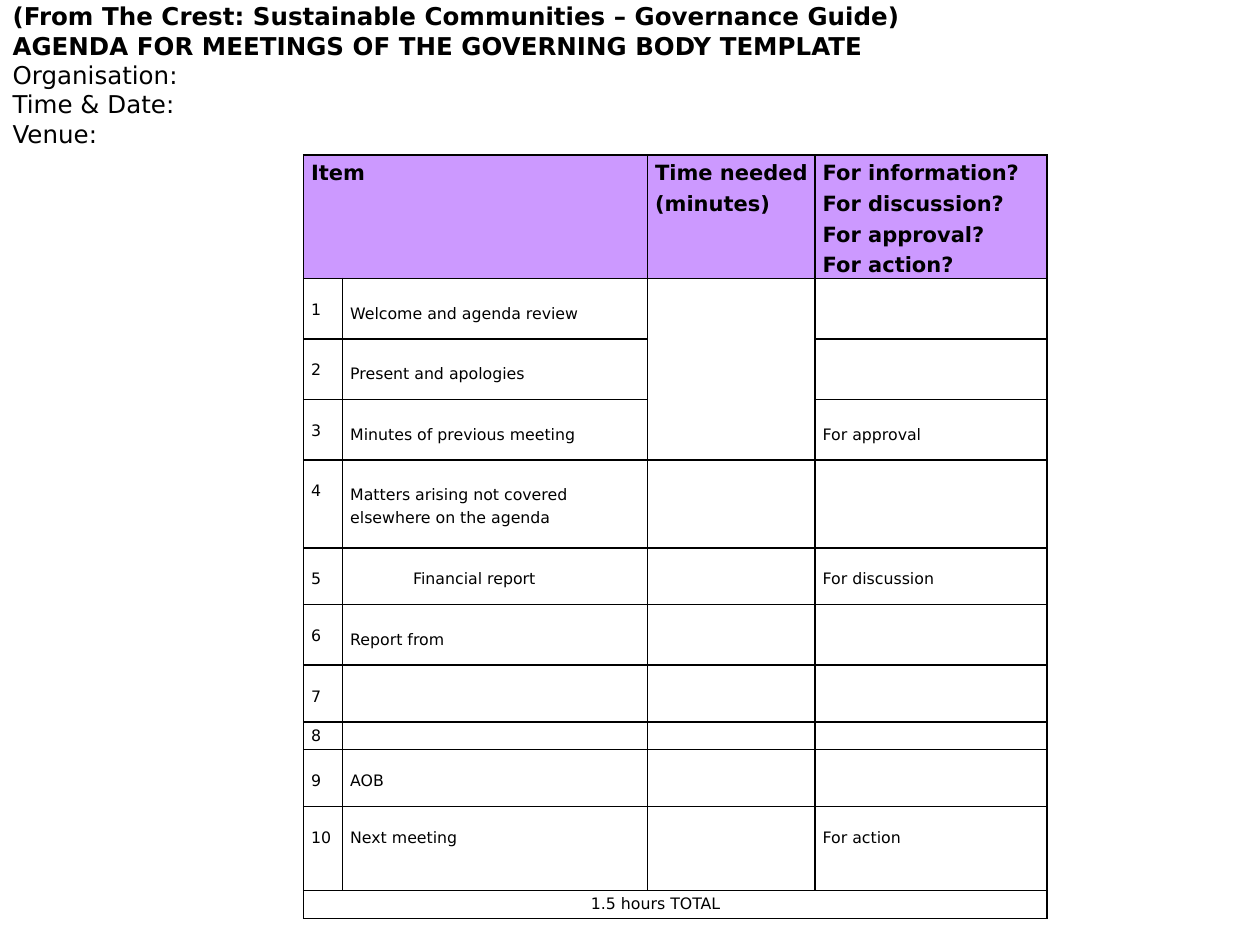
from lxml import etree
from pptx import Presentation, util as u
from pptx.dml.color import RGBColor
from pptx.enum import text as t
from pptx.oxml import ns

BLACK = RGBColor(0x00, 0x00, 0x00)
WHITE = RGBColor(0xFF, 0xFF, 0xFF)
LILAC = RGBColor(0xCC, 0x99, 0xFF)
FONT = "DejaVu Sans"

# Space above the text inside a cell, in inches
HIGH, MIDDLE, LOW = 0, 0.14, 0.17
COLUMNS = [0.31, 2.42, 1.33, 1.84]
HEADER = ["Item", "", "Time needed\n(minutes)",
          "For information?\nFor discussion?\nFor approval?\nFor action?"]
# Row height, space above number, item, space above item, purpose
AGENDA = [
    (0.48, MIDDLE, "Welcome and agenda review", LOW, ""),
    (0.48, MIDDLE, "Present and apologies", LOW, ""),
    (0.48, MIDDLE, "Minutes of previous meeting", LOW, "For approval"),
    (0.70, MIDDLE, "Matters arising not covered elsewhere on the agenda", LOW, ""),
    (0.45, MIDDLE, "Financial report", MIDDLE, "For discussion"),
    (0.48, MIDDLE, "Report from", LOW, ""),
    (0.45, MIDDLE, "", HIGH, ""),
    (0.22, HIGH, "", HIGH, ""),
    (0.45, MIDDLE, "AOB", MIDDLE, ""),
    (0.67, MIDDLE, "Next meeting", MIDDLE, "For action"),
]
HEIGHTS = [0.98] + [entry[0] for entry in AGENDA] + [0.22]


def write(frame, content, size, bold_lines, spacing, indent=0):
    """Put one paragraph per line into a text frame."""
    frame.text = content
    for index, paragraph in enumerate(frame.paragraphs):
        paragraph.alignment = t.PP_ALIGN.LEFT
        paragraph.line_spacing = spacing
        paragraph.space_before = u.Pt(0)
        if indent:
            paragraph._p.get_or_add_pPr().set("marL", str(u.Inches(indent)))
        for run in paragraph.runs:
            values = {"name": FONT, "size": u.Pt(size), "bold": index < bold_lines}
            for name, value in values.items():
                setattr(run.font, name, value)
            run.font.color.rgb = BLACK
        if not paragraph.runs:
            etree.SubElement(paragraph._p, ns.qn("a:endParaRPr"), sz=str(size * 100))


def fill_cell(cell, content="", top=HIGH, indent=0, size=9, bold_lines=0, colour=WHITE):
    """Write a cell and give it margins, black borders and a fill."""
    margins = {"margin_left": 0.06, "margin_right": 0.04,
               "margin_top": top, "margin_bottom": 0}
    for name, value in margins.items():
        setattr(cell, name, u.Inches(value))
    write(cell.text_frame, content, size, bold_lines, 1.25, indent)
    properties = cell._tc.get_or_add_tcPr()
    for side in ("lnL", "lnR", "lnT", "lnB"):
        line = etree.SubElement(properties, ns.qn(f"a:{side}"), w=str(u.Pt(1)))
        solid = etree.SubElement(line, ns.qn("a:solidFill"))
        etree.SubElement(solid, ns.qn("a:srgbClr"), val=str(BLACK))
    cell.fill.solid()
    cell.fill.fore_color.rgb = colour


presentation = Presentation()
presentation.slide_width = u.Inches(10)
presentation.slide_height = u.Inches(7.5)
slide = presentation.slides.add_slide(presentation.slide_layouts[5])

# Heading and meeting details
title = slide.shapes.title
place = {"left": 0, "top": -0.04, "width": 8.85, "height": 1.58}
for name, value in place.items():
    setattr(title, name, u.Inches(value))
frame = title.text_frame
layout = {"word_wrap": True, "auto_size": t.MSO_AUTO_SIZE.NONE,
          "vertical_anchor": t.MSO_ANCHOR.TOP, "margin_top": u.Inches(0.05)}
for name, value in layout.items():
    setattr(frame, name, value)
write(frame, "(From The Crest: Sustainable Communities – Governance Guide)\n"
      "AGENDA FOR MEETINGS OF THE GOVERNING BODY TEMPLATE\n"
      "Organisation:\nTime & Date:\nVenue:", 14, 2, 1.0)

# Agenda table
table = slide.shapes.add_table(
    len(HEIGHTS), len(COLUMNS), u.Inches(2.41), u.Inches(1.23),
    u.Inches(sum(COLUMNS)), u.Inches(sum(HEIGHTS))).table
table.first_row = table.horz_banding = False
for column, width in zip(table.columns, COLUMNS):
    column.width = u.Inches(width)
for row, height in zip(table.rows, HEIGHTS):
    row.height = u.Inches(height)

# Header row
for index, heading in enumerate(HEADER):
    fill_cell(table.cell(0, index), heading, size=12, bold_lines=4, colour=LILAC)

# Numbered items
for number, (height, number_top, item, item_top, purpose) in enumerate(AGENDA, 1):
    indent = 0.5 if item == "Financial report" else 0
    fill_cell(table.cell(number, 0), str(number), number_top)
    fill_cell(table.cell(number, 1), item, item_top, indent)
    fill_cell(table.cell(number, 2))
    fill_cell(table.cell(number, 3), purpose, item_top if purpose else HIGH)

# Total row
last = len(HEIGHTS) - 1
fill_cell(table.cell(last, 0), "1.5 hours TOTAL", indent=2.22)
for index in range(1, len(COLUMNS)):
    fill_cell(table.cell(last, index))

# Merged cells
table.cell(0, 0).merge(table.cell(0, 1))
table.cell(1, 2).merge(table.cell(3, 2))
table.cell(last, 0).merge(table.cell(last, 3))

presentation.save("out.pptx")
